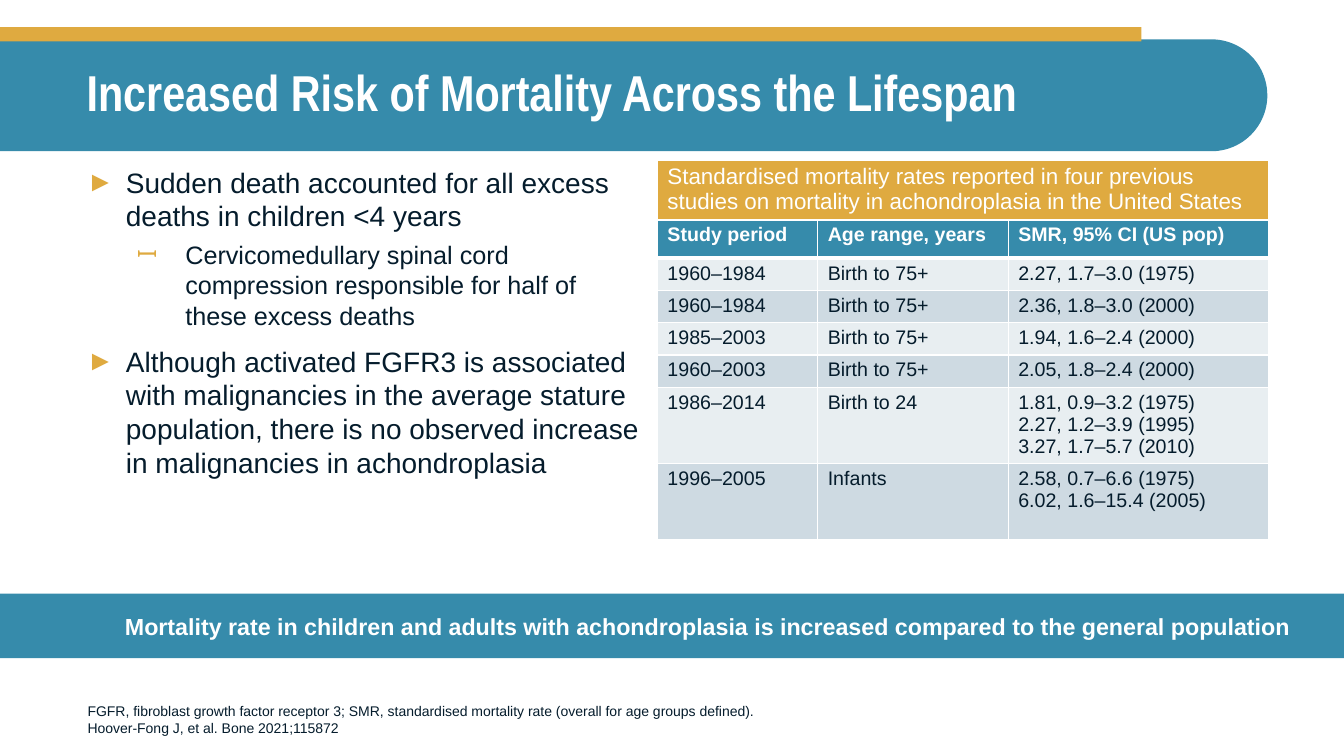
from dataclasses import dataclass

from lxml.etree import SubElement
from pptx import Presentation
from pptx.dml.color import RGBColor
from pptx.enum.shapes import MSO_SHAPE
from pptx.enum.text import MSO_ANCHOR, PP_ALIGN
from pptx.oxml.ns import qn
from pptx.util import Pt

PX = 9144
TEAL, GOLD, INK, WHITE = "368BAB", "DFAA40", "051C2C", "FFFFFF"
PALE, MIST = "E8EEF1", "CEDAE2"


@dataclass
class Area:
    left: int
    top: int
    width: int
    height: int

    def emu(self) -> list[int]:
        return [value * PX for value in (self.left, self.top, self.width, self.height)]


@dataclass
class Style:
    size: float
    color: str = INK
    bold: bool = False
    name: str = "Arial"


@dataclass
class Point:
    text: str
    size: int
    level: int
    bullet: str
    margin: int
    hanging: int
    before: int


@dataclass
class TableRow:
    height: int
    texts: tuple
    style: Style
    fill: str
    top: int = 1
    bottom: int = 1


POINTS = [
    Point("Sudden death accounted for all excess deaths in children <4 years",
          20, 0, "►", 39, 39, 0),
    Point("Cervicomedullary spinal cord compression responsible for half of these excess deaths",
          18, 1, "ꟷ", 98, 48, 5),
    Point("Although activated FGFR3 is associated with malignancies in the average stature "
          "population, there is no observed increase in malignancies in achondroplasia",
          20, 0, "►", 39, 39, 10),
]

BODY = Style(14)
ROWS = [
    TableRow(59, ("Standardised mortality rates reported in four previous studies on "
                  "mortality in achondroplasia in the United States", "", ""),
             Style(16, WHITE), GOLD),
    TableRow(38, ("Study period", "Age range, years", "SMR, 95% CI (US pop)"),
             Style(14, WHITE, True), TEAL, bottom=3),
    TableRow(32, ("1960–1984", "Birth to 75+", "2.27, 1.7–3.0 (1975)"), BODY, PALE, top=3),
    TableRow(32, ("1960–1984", "Birth to 75+", "2.36, 1.8–3.0 (2000)"), BODY, MIST),
    TableRow(32, ("1985–2003", "Birth to 75+", "1.94, 1.6–2.4 (2000)"), BODY, PALE),
    TableRow(32, ("1960–2003", "Birth to 75+", "2.05, 1.8–2.4 (2000)"), BODY, MIST),
    TableRow(75, ("1986–2014", "Birth to 24",
                  "1.81, 0.9–3.2 (1975)\n2.27, 1.2–3.9 (1995)\n3.27, 1.7–5.7 (2010)"), BODY, PALE),
    TableRow(75, ("1996–2005", "Infants", "2.58, 0.7–6.6 (1975)\n6.02, 1.6–15.4 (2005)"),
             BODY, MIST),
]
COLUMNS = (159, 189, 258)


def rgb(color: str) -> RGBColor:
    return RGBColor.from_string(color)


def set_font(para, style: Style) -> None:
    font = para.font
    font.size, font.bold, font.name = Pt(style.size), style.bold, style.name
    font.color.rgb = rgb(style.color)


def set_indent(para, margin: int, hanging: int = 0) -> None:
    properties = para._p.get_or_add_pPr()
    properties.set("marL", str(margin * PX))
    properties.set("indent", str(-hanging * PX))


def add_block(page, kind: MSO_SHAPE, area: Area, color: str):
    block = page.shapes.add_shape(kind, *area.emu())
    block.shadow.inherit = False
    block.fill.solid()
    block.fill.fore_color.rgb = rgb(color)
    block.line.fill.background()
    return block


def add_text(page, area: Area, text: str, style: Style, anchor: MSO_ANCHOR, spacing: float) -> None:
    frame = page.shapes.add_textbox(*area.emu()).text_frame
    frame.word_wrap = True
    frame.vertical_anchor = anchor
    para = frame.paragraphs[0]
    para.text = text
    para.line_spacing = spacing
    set_font(para, style)


def add_points(page, area: Area, points: list[Point]) -> None:
    frame = page.shapes.add_textbox(*area.emu()).text_frame
    frame.word_wrap = True
    for index, point in enumerate(points):
        para = frame.add_paragraph() if index else frame.paragraphs[0]
        para.text = point.text
        para.level = point.level
        para.space_before = Pt(point.before)
        set_indent(para, point.margin, point.hanging)
        properties = para._p.get_or_add_pPr()
        bullet_color = SubElement(properties, qn("a:buClr"))
        SubElement(bullet_color, qn("a:srgbClr"), val=GOLD)
        SubElement(properties, qn("a:buFont"), typeface="Arial")
        SubElement(properties, qn("a:buChar"), char=point.bullet)
        set_font(para, Style(point.size))


def set_borders(cell, widths: dict[str, int]) -> None:
    properties = cell._tc.get_or_add_tcPr()
    for side, width in widths.items():
        line = SubElement(properties, qn(f"a:{side}"), w=str(Pt(width)))
        fill = SubElement(line, qn("a:solidFill"))
        SubElement(fill, qn("a:srgbClr"), val=WHITE)


def add_mortality_table(page, left: int, top: int) -> None:
    area = Area(left, top, sum(COLUMNS), sum(row.height for row in ROWS))
    table = page.shapes.add_table(len(ROWS), len(COLUMNS), *area.emu()).table
    table.first_row = table.horz_banding = False
    for column, width in zip(table.columns, COLUMNS):
        column.width = width * PX
    for row_index, row in enumerate(ROWS):
        table.rows[row_index].height = row.height * PX
        for column_index, text in enumerate(row.texts):
            cell = table.cell(row_index, column_index)
            cell.margin_top, cell.margin_bottom = 4 * PX, 2 * PX
            cell.text = text
            for para in cell.text_frame.paragraphs:
                set_font(para, row.style)
            set_borders(cell, {"lnL": 1, "lnR": 1, "lnT": row.top, "lnB": row.bottom})
            cell.fill.solid()
            cell.fill.fore_color.rgb = rgb(row.fill)
    table.cell(0, 0).merge(table.cell(0, len(COLUMNS) - 1))


def add_banner(page, area: Area, text: str) -> None:
    banner = add_block(page, MSO_SHAPE.RECTANGLE, area, TEAL)
    frame = banner.text_frame
    frame.word_wrap = True
    frame.vertical_anchor = MSO_ANCHOR.MIDDLE
    para = frame.paragraphs[0]
    para.text = text
    para.alignment = PP_ALIGN.CENTER
    set_indent(para, 69)
    set_font(para, Style(16.6, WHITE, True))


def main() -> None:
    deck = Presentation()
    deck.slide_width, deck.slide_height = 1333 * PX, 750 * PX
    page = deck.slides.add_slide(deck.slide_layouts[6])

    header = add_block(page, MSO_SHAPE.ROUND_2_SAME_RECTANGLE, Area(573, -534, 111, 1257), TEAL)
    header.adjustments[0], header.adjustments[1] = 0, 0.5
    header.rotation = 270
    add_block(page, MSO_SHAPE.RECTANGLE, Area(0, 27, 1132, 14), GOLD)
    add_text(page, Area(76, 39, 1181, 110), "Increased Risk of Mortality Across the Lifespan",
             Style(36, WHITE, True, "Arial Narrow"), MSO_ANCHOR.MIDDLE, 0.9)
    add_points(page, Area(76, 159, 569, 428), POINTS)
    add_text(page, Area(77, 671, 988, 64),
             "FGFR, fibroblast growth factor receptor 3; SMR, standardised mortality rate "
             "(overall for age groups defined).\vHoover-Fong J, et al. Bone 2021;115872",
             Style(10), MSO_ANCHOR.BOTTOM, 1.0)
    add_banner(page, Area(0, 589, 1333, 64),
               "Mortality rate in children and adults with achondroplasia is increased "
               "compared to the general population")
    add_mortality_table(page, 652, 159)
    deck.save("out.pptx")


if __name__ == "__main__":
    main()
